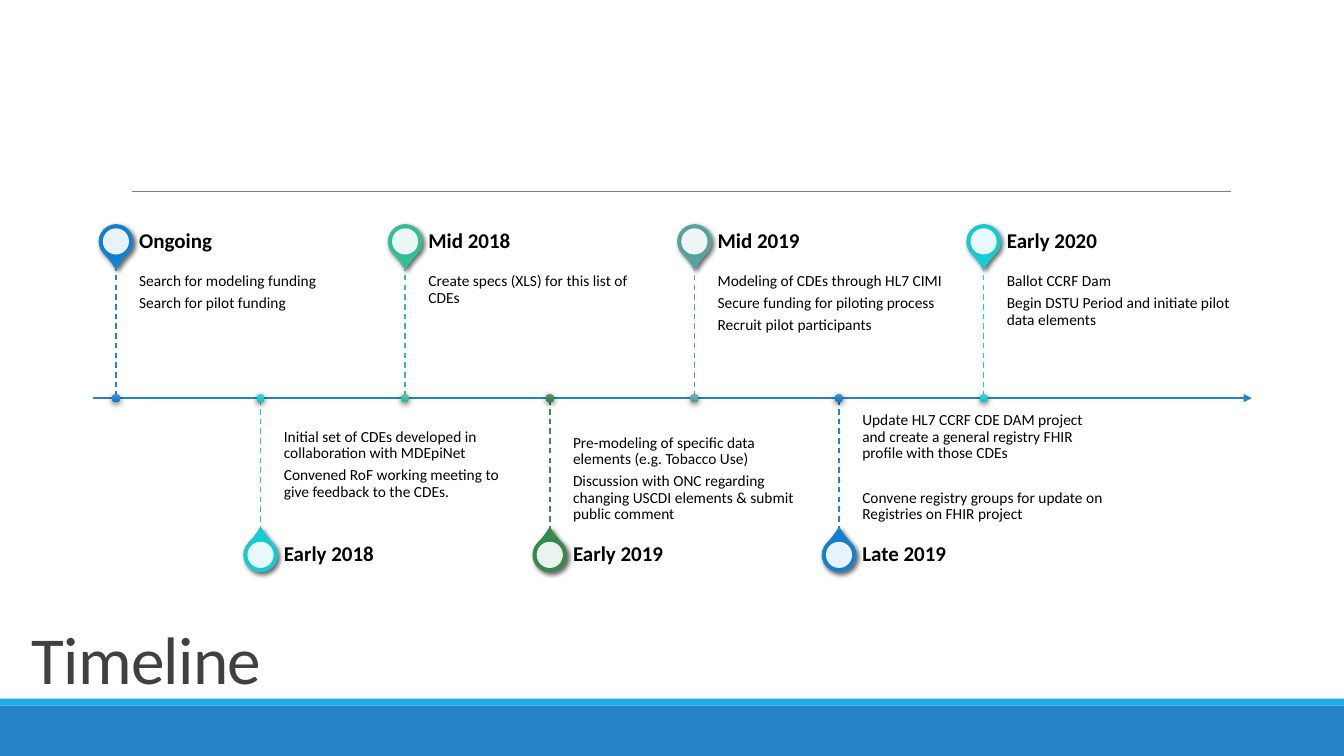
"""Builds a timeline slide with seven milestones on alternating sides of an axis."""
from dataclasses import dataclass

import lxml.etree
import pptx
import pptx.dml.color
import pptx.enum.dml
import pptx.enum.shapes
import pptx.enum.text
import pptx.oxml
import pptx.oxml.ns
import pptx.util

SHAPE = pptx.enum.shapes.MSO_SHAPE
ANCHOR = pptx.enum.text.MSO_ANCHOR
DASH = pptx.enum.dml.MSO_LINE.DASH
WIDTH, HEIGHT = pptx.util.Inches(13.333), pptx.util.Inches(7.5)


def wide(percent: float) -> int:
    """Return a share of the slide's width."""
    return round(WIDTH * percent / 100)


def tall(percent: float) -> int:
    """Return a share of the slide's height."""
    return round(HEIGHT * percent / 100)


FIRST, STEP, AXIS = wide(8.63), wide(10.76), tall(52.67)
BODY, HEADING, PIN_REACH = tall(17.6), tall(6.13), tall(20.73)
PIN, DISC, DOT = wide(2.48), wide(1.95), wide(0.6)
TEXT_SHIFT, TEXT_WIDTH = wide(1.73), wide(17.93)
CIRCLE = '<a:path path="circle"><a:fillToRect l="100000" t="100000" r="100000" b="100000"/></a:path>'
DOWNWARD = '<a:lin ang="5400000" scaled="0"/>'


@dataclass(frozen=True)
class Hue:
    """Line colour and gradient stops of one milestone."""
    line: str
    pin: dict[int, str]
    dot: dict[int, str]


@dataclass(frozen=True)
class Milestone:
    """One dated entry; foot is the bottom inset, gap the space after, in points."""
    heading: str
    points: list[str]
    hue: Hue
    foot: float = 5.76
    gap: float = 3.85


@dataclass(frozen=True)
class Shadow:
    """Outer shadow in percent, points and degrees."""
    alpha: int
    blur: float
    distance: float
    angle: int


BLUE = Hue("2683C6", {0: "0D7ECF", 34: "117ECD", 70: "0D81D4", 100: "1E84CE"},
           {0: "5191D0", 50: "1E84CE", 100: "1477BE"})
CYAN = Hue("28C4CC", {0: "0ECBD5", 34: "12CAD3", 70: "0FD0DA", 100: "20CBD4"},
           {0: "51CED6", 50: "20CBD4", 100: "15BBC4"})
MINT = Hue("42BA97", {0: "2DBE94", 34: "30BD94", 70: "2EC397", 100: "3CC09A"},
           {0: "5FC3A3", 50: "3CC09A", 100: "30B08B"})
GREEN = Hue("3E8853", {0: "2F8949", 34: "32894A", 70: "318D4B", 100: "3A8C51"},
            {0: "5C966A", 50: "3A8C51", 100: "317F47"})
TEAL = Hue("62A39F", {0: "52A19C", 34: "55A19C", 70: "54A5A0", 100: "5FA6A2"},
           {0: "76ADA9", 50: "5FA6A2", 100: "519793"})
PIN_SHADOW, DOT_SHADOW = Shadow(60, 3.5, 2, 45), Shadow(63, 4.5, 1.5, 90)

MILESTONES = [
    Milestone("Ongoing", ["Search for modeling funding", "Search for pilot funding"], BLUE),
    Milestone("Early 2018", ["Initial set of CDEs developed in collaboration with MDEpiNet",
                             "Convened RoF working meeting to give feedback to the CDEs."],
              CYAN, foot=21.7),
    Milestone("Mid 2018", ["Create specs (XLS) for this list of CDEs"], MINT),
    Milestone("Early 2019", ["Pre-modeling of specific data elements (e.g. Tobacco Use)",
                             "Discussion with ONC regarding changing USCDI elements & submit public comment"],
              GREEN),
    Milestone("Mid 2019", ["Modeling of CDEs through HL7 CIMI", "Secure funding for piloting process",
                           "Recruit pilot participants"], TEAL),
    Milestone("Late 2019", ["Update HL7 CCRF CDE DAM project and create a general registry FHIR profile with those CDEs",
                            "Convene registry groups for update on Registries on FHIR project"],
              BLUE, gap=19.75),
    Milestone("Early 2020", ["Ballot CCRF Dam", "Begin DSTU Period and initiate pilot data elements"], CYAN),
]


def apply(target, values: dict) -> None:
    """Set every attribute in values on the target."""
    for name, value in values.items():
        setattr(target, name, value)


def paint(fill, colour: str) -> None:
    """Give a fill one solid colour."""
    fill.solid()
    fill.fore_color.rgb = pptx.dml.color.RGBColor.from_string(colour)


def element(markup: str):
    """Parse drawing markup whose root is written without its namespace."""
    namespace = pptx.oxml.ns.nsdecls("a")
    name, rest = markup[1:].split(">", 1)
    return pptx.oxml.parse_xml(f"<{name} {namespace}>{rest}")


def add_gradient(shape, stops: dict[int, str], course: str) -> None:
    """Fill a shape with gradient stops along a course."""
    shape.fill.background()
    marks = "".join(f'<a:gs pos="{place * 1000}"><a:srgbClr val="{colour}"/></a:gs>'
                    for place, colour in stops.items())
    properties = shape.element.spPr
    empty = properties.find(pptx.oxml.ns.qn("a:noFill"))
    properties.replace(empty, element(f"<a:gradFill><a:gsLst>{marks}</a:gsLst>{course}</a:gradFill>"))


def add_shadow(shape, shadow: Shadow) -> None:
    """Give a shape an outer shadow."""
    effects = shape.element.spPr.find(pptx.oxml.ns.qn("a:effectLst"))
    effects.append(element(
        f'<a:outerShdw blurRad="{shadow.blur * 12700:.0f}" dist="{shadow.distance * 12700:.0f}" '
        f'dir="{shadow.angle * 60000}" algn="ctr" rotWithShape="0"><a:srgbClr val="000000">'
        f'<a:alpha val="{shadow.alpha * 1000}"/></a:srgbClr></a:outerShdw>'))


def add_plain(page, kind, left: int, top: int, width: int, height: int, colour: str):
    """Add a solid shape without outline or shadow."""
    shape = page.shapes.add_shape(kind, left, top, width, height)
    shape.shadow.inherit = False
    paint(shape.fill, colour)
    shape.line.fill.background()
    return shape


def add_centred(page, kind, x: int, y: int, size: int):
    """Add a plain white shape centred on a point."""
    return add_plain(page, kind, x - size // 2, y - size // 2, size, size, "FFFFFF")


def add_line(page, start: tuple[int, int], end: tuple[int, int], colour: str, weight: float, dash=None):
    """Add a straight line without shadow."""
    line = page.shapes.add_connector(pptx.enum.shapes.MSO_CONNECTOR.STRAIGHT, *start, *end)
    paint(line.line.fill, colour)
    apply(line.line, {"width": pptx.util.Pt(weight), "dash_style": dash})
    lxml.etree.SubElement(line.element.spPr, pptx.oxml.ns.qn("a:effectLst"))
    return line


def add_text(page, x: int, top: int, height: int, texts: list[str], frame: dict, gap: float, font: dict) -> None:
    """Add a text box with one paragraph for each text."""
    box = page.shapes.add_textbox(x + TEXT_SHIFT, top, TEXT_WIDTH, height)
    apply(box.text_frame, {"word_wrap": True, "margin_left": 0, **frame})
    box.text_frame.text = "\n".join(texts)
    for para in box.text_frame.paragraphs:
        apply(para, {"line_spacing": 0.9, "space_after": pptx.util.Pt(gap)})
        for span in para.runs:
            apply(span.font, {"name": "Calibri", **font})
            paint(span.font.fill, "000000")


def add_milestone(page, item: Milestone, x: int, above: bool) -> None:
    """Draw a milestone's pin, texts, stem and dot."""
    side = -1 if above else 1
    pin_y = AXIS + side * PIN_REACH
    pin = add_centred(page, SHAPE.TEAR, x, pin_y, PIN)
    pin.adjustments[0] = 1.15
    pin.rotation = 135 if above else 315
    add_gradient(pin, item.hue.pin, CIRCLE)
    paint(pin.line.fill, item.hue.line)
    pin.line.width = pptx.util.Pt(1)
    add_shadow(pin, PIN_SHADOW)
    disc = add_centred(page, SHAPE.OVAL, x, pin_y, DISC)
    colour = disc.element.spPr.find(".//" + pptx.oxml.ns.qn("a:srgbClr"))
    lxml.etree.SubElement(colour, pptx.oxml.ns.qn("a:alpha"), val="90000")

    point = pptx.util.Pt
    frame = {"vertical_anchor": ANCHOR.TOP if above else ANCHOR.BOTTOM,
             "margin_top": point(5.76 if above else 7.92),
             "margin_right": point(5.76 if above else 0),
             "margin_bottom": point(7.92 if above else item.foot)}
    add_text(page, x, AXIS - BODY if above else AXIS, BODY, item.points, frame, item.gap, {"size": point(11)})
    frame = {"vertical_anchor": ANCHOR.MIDDLE, "margin_top": 0, "margin_bottom": 0}
    heading_top = AXIS - BODY - HEADING if above else AXIS + BODY
    add_text(page, x, heading_top, HEADING, [item.heading], frame, 5.25, {"size": point(15), "bold": True})

    add_line(page, (x, AXIS + side * BODY), (x, AXIS), item.hue.line, 1, DASH)
    dot = add_centred(page, SHAPE.OVAL, x, AXIS, DOT)
    add_gradient(dot, item.hue.dot, DOWNWARD)
    add_shadow(dot, DOT_SHADOW)


def add_title(page, text: str) -> None:
    """Place and format the slide title."""
    title = page.shapes.title
    apply(title, {"left": wide(1.58), "top": tall(77.07), "width": wide(66.23), "height": tall(16)})
    title.text_frame.text = text
    apply(title.text_frame, {"vertical_anchor": ANCHOR.BOTTOM, "word_wrap": True,
                             "auto_size": pptx.enum.text.MSO_AUTO_SIZE.NONE})
    para = title.text_frame.paragraphs[0]
    apply(para, {"alignment": pptx.enum.text.PP_ALIGN.LEFT, "line_spacing": 0.85})
    span = para.runs[0]
    apply(span.font, {"name": "Calibri", "size": pptx.util.Pt(48)})
    paint(span.font.fill, "404040")
    span.font._element.set("spc", "-50")


def main() -> None:
    """Build and save the deck."""
    deck = pptx.Presentation()
    apply(deck, {"slide_width": WIDTH, "slide_height": HEIGHT})
    page = deck.slides.add_slide(deck.slide_layouts[5])
    add_plain(page, SHAPE.RECTANGLE, 0, tall(93.33), WIDTH, tall(6.67), "2683C6")
    add_plain(page, SHAPE.RECTANGLE, 0, tall(92.4), WIDTH, tall(0.93), "1CADE4")
    add_line(page, (wide(9.83), tall(25.33)), (wide(91.58), tall(25.33)), "808080", 0.5)
    add_title(page, "Timeline")
    axis = add_line(page, (wide(6.9), AXIS), (wide(93.15), AXIS), "2683C6", 1.5)
    lxml.etree.SubElement(axis.line._ln, pptx.oxml.ns.qn("a:tailEnd"), type="triangle")
    for index, item in enumerate(MILESTONES):
        add_milestone(page, item, FIRST + index * STEP, index % 2 == 0)
    deck.save("out.pptx")


if __name__ == "__main__":
    main()
